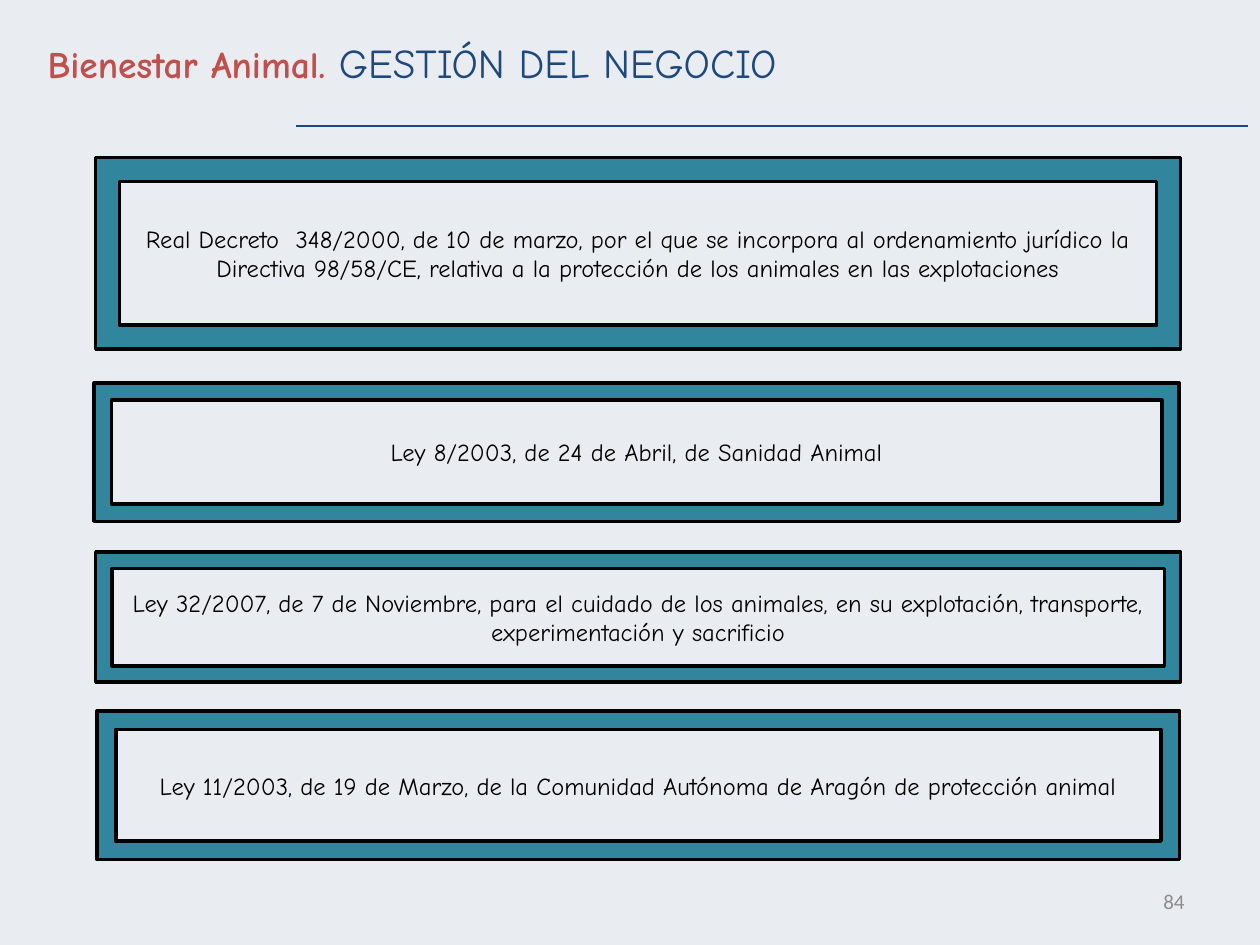
from lxml.etree import SubElement
from pptx import Presentation
from pptx.dml.color import RGBColor
from pptx.enum.shapes import MSO_CONNECTOR, MSO_SHAPE
from pptx.enum.text import MSO_ANCHOR, PP_ALIGN
from pptx.oxml.ns import qn
from pptx.util import Cm, Pt

COLORS = {
    "background": "E9EDF2",
    "frame": "31859C",
    "black": "000000",
    "navy": "1F497D",
    "red": "C0504D",
    "gray": "8C8C8C",
}
LAWS = [
    (1.93, 3.18, 21.87, 3.86, "Real Decreto  348/2000, de 10 de marzo, por el que se incorpora al ordenamiento jurídico la Directiva 98/58/CE, relativa a la protección de los animales en las explotaciones"),
    (1.9, 7.72, 21.87, 2.79, "Ley 8/2003, de 24 de Abril, de Sanidad Animal"),
    (1.93, 11.13, 21.87, 2.62, "Ley 32/2007, de 7 de Noviembre, para el cuidado de los animales, en su explotación, transporte, experimentación y sacrificio"),
    (1.96, 14.33, 21.82, 3, "Ley 11/2003, de 19 de Marzo, de la Comunidad Autónoma de Aragón de protección animal"),
]


def color(name):
    return RGBColor.from_string(COLORS[name])


def style_font(font, name, size, color_name, bold=False):
    font.name = name
    font.size = Pt(size)
    font.bold = bold
    font.color.rgb = color(color_name)


presentation = Presentation()
presentation.slide_width = Cm(25.4)
presentation.slide_height = Cm(19.05)
slide = presentation.slides.add_slide(presentation.slide_layouts[6])
slide.background.fill.solid()
slide.background.fill.fore_color.rgb = color("background")

for left, top, width, height, law in LAWS:
    frame = slide.shapes.add_shape(MSO_SHAPE.FRAME, Cm(left), Cm(top), Cm(width), Cm(height))
    frame.shadow.inherit = False
    frame.fill.solid()
    frame.fill.fore_color.rgb = color("frame")
    frame.line.color.rgb = color("black")
    frame.line.width = Pt(2)
    frame.text_frame.word_wrap = True
    frame.text_frame.vertical_anchor = MSO_ANCHOR.MIDDLE
    paragraph = frame.text_frame.paragraphs[0]
    paragraph.text = law
    paragraph.alignment = PP_ALIGN.CENTER
    style_font(paragraph.font, "Comic Neue", 14, "black")

title = slide.shapes.add_textbox(Cm(0.71), Cm(0), Cm(24.69), Cm(2.5))
title.text_frame.word_wrap = True
title.text_frame.vertical_anchor = MSO_ANCHOR.MIDDLE
paragraph = title.text_frame.paragraphs[0]
for text, size, color_name, bold in [
    ("Bienestar Animal. ", 21.4, "red", True),
    ("GESTIÓN DEL NEGOCIO", 23.4, "navy", False),
]:
    run = paragraph.add_run()
    run.text = text
    style_font(run.font, "Comic Neue", size, color_name, bold)

title_rule = slide.shapes.add_connector(MSO_CONNECTOR.STRAIGHT, Cm(5.97), Cm(2.54), Cm(25.15), Cm(2.54))
title_rule.line.color.rgb = color("navy")
title_rule.line.width = Pt(1.5)
SubElement(title_rule._element.spPr, qn("a:effectLst"))

page_number = slide.shapes.add_textbox(Cm(18.2), Cm(17.65), Cm(5.93), Cm(1.02))
page_number.text_frame.word_wrap = True
page_number.text_frame.vertical_anchor = MSO_ANCHOR.MIDDLE
paragraph = page_number.text_frame.paragraphs[0]
paragraph.text = "84"
paragraph.alignment = PP_ALIGN.RIGHT
style_font(paragraph.font, "Calibri", 12, "gray")

presentation.save("out.pptx")
